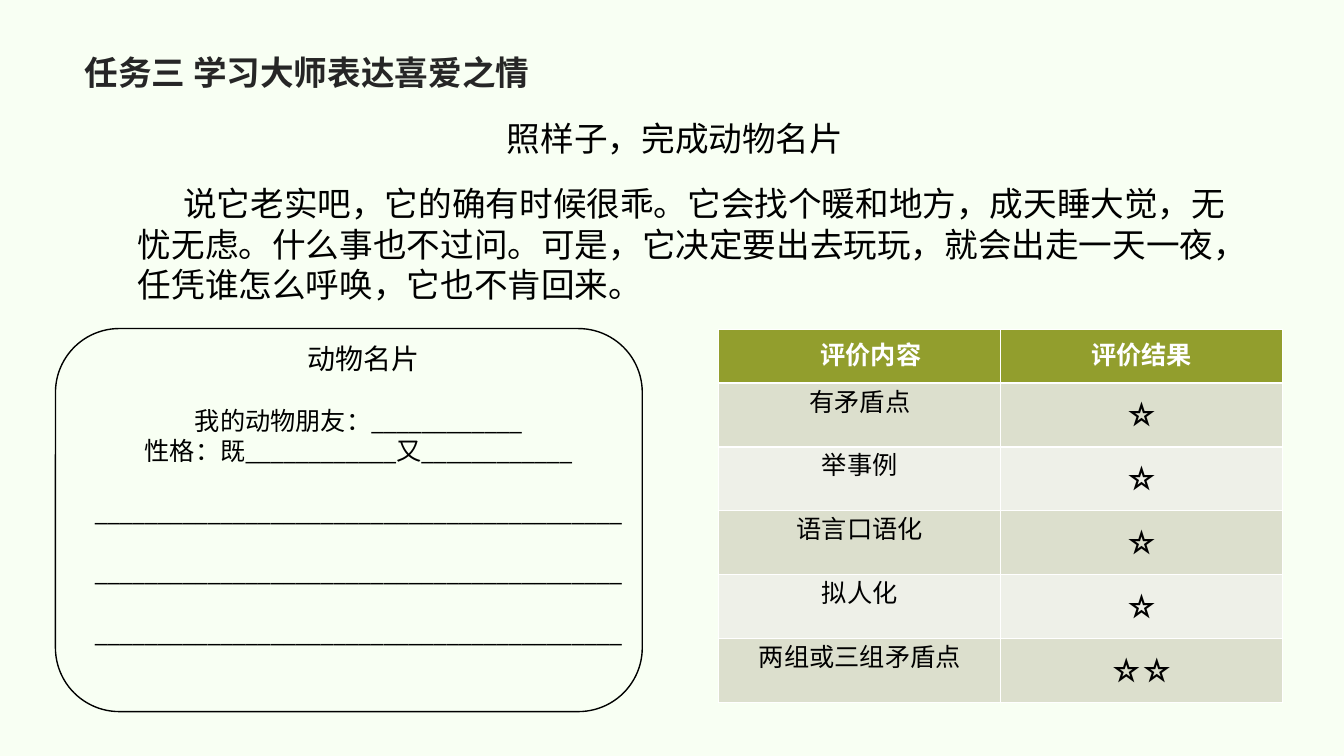
from pptx import Presentation
from pptx.dml.color import RGBColor
from pptx.enum.shapes import MSO_SHAPE
from pptx.enum.text import MSO_ANCHOR, PP_ALIGN
from pptx.oxml.ns import qn
from pptx.util import Inches, Pt

BACKGROUND = RGBColor(0xF8, 0xFF, 0xF3)
BLACK = RGBColor(0, 0, 0)
WHITE = RGBColor(0xFF, 0xFF, 0xFF)
TITLE_GREY = RGBColor(0x26, 0x26, 0x26)
OLIVE = RGBColor(0x92, 0x9E, 0x2D)
BANDS = (RGBColor(0xDC, 0xDF, 0xCD), RGBColor(0xEE, 0xF0, 0xE8))
CJK_FONT = "Noto Sans CJK SC"


def place(at):
    return [Inches(length) for length in at]


class Worksheet:
    """Holds the text style and the current slide."""

    style = {"name": CJK_FONT, "size": Pt(18), "bold": False}

    def __init__(self, deck):
        self.page = deck.slides.add_slide(deck.slide_layouts[5])
        fill = self.page.background.fill
        fill.solid()
        fill.fore_color.rgb = BACKGROUND

    def add_words(self, para, text, color=BLACK, align=PP_ALIGN.CENTER, **changes):
        values = {**self.style, **changes}
        span = para.add_run()
        span.text = text
        for name, value in values.items():
            setattr(span.font, name, value)
        span.font.color.rgb = color
        east_asian = span.font._element.makeelement(qn("a:ea"), {"typeface": CJK_FONT})
        span.font._element.append(east_asian)
        para.alignment = align
        para.line_spacing = Pt(values["size"].pt * 1.2)

    def title(self, at, text):
        box = self.page.shapes.title
        box.left, box.top, box.width, box.height = place(at)
        frame = box.text_frame
        margins = {"margin_left": 0.11, "margin_top": 0.04,
                   "margin_right": 0.08, "margin_bottom": 0.04}
        for name, value in margins.items():
            setattr(frame, name, Inches(value))
        frame.vertical_anchor = MSO_ANCHOR.MIDDLE
        self.add_words(frame.paragraphs[0], text, TITLE_GREY, PP_ALIGN.LEFT,
                       name="Arial", size=Pt(24), bold=True)

    def text(self, at, lines):
        """Each line is its text, the space before it and its format."""
        frame = self.page.shapes.add_textbox(*place(at)).text_frame
        frame.word_wrap = True
        for number, (text, space, changes) in enumerate(lines):
            para = frame.add_paragraph() if number else frame.paragraphs[0]
            self.add_words(para, text, **changes)
            if space:
                para.space_before = Pt(space)
        return frame

    def card(self, at):
        shape = self.page.shapes.add_shape(MSO_SHAPE.ROUNDED_RECTANGLE, *place(at))
        shape.shadow.inherit = False
        shape.fill.background()
        shape.line.color.rgb = BLACK
        shape.line.width = Pt(1)

    def table(self, at, header, rows, heights):
        frame = self.page.shapes.add_table(len(rows) + 1, len(header), *place(at))
        table = frame.table
        for number, values in enumerate([header, *rows]):
            table.rows[number].height = Inches(heights[min(number, 1)])
            for column, text in enumerate(values):
                cell = table.cell(number, column)
                cell.fill.solid()
                cell.fill.fore_color.rgb = BANDS[(number - 1) % 2] if number else OLIVE
                para = cell.text_frame.paragraphs[0]
                if number:
                    self.add_words(para, text, size=Pt(32 if column else 18))
                else:
                    cell.vertical_anchor = MSO_ANCHOR.MIDDLE
                    self.add_words(para, text, WHITE, bold=True)
        table.cell(0, 0).margin_left = Inches(0.32)


def main():
    deck = Presentation()
    deck.slide_width, deck.slide_height = Inches(13.33), Inches(7.5)
    sheet = Worksheet(deck)

    # Title, instruction and sample passage
    sheet.title((0.73, 0.48, 11.87, 0.48), "任务三 学习大师表达喜爱之情")
    large = {"size": Pt(24)}
    sheet.text((0.42, 1.12, 12.55, 0.5), [("照样子，完成动物名片", 0, large)])
    passage = sheet.text((1.27, 1.77, 11.13, 1.31), [(
        "说它老实吧，它的确有时候很乖。它会找个暖和地方，成天睡大觉，无忧无虑。"
        "什么事也不过问。可是，它决定要出去玩玩，就会出走一天一夜，"
        "任凭谁怎么呼唤，它也不肯回来。", 0, {**large, "align": PP_ALIGN.LEFT})])
    passage.paragraphs[0]._p.get_or_add_pPr().set("indent", str(Inches(0.45)))

    # Animal card with blanks to fill in
    sheet.card((0.55, 3.26, 5.82, 3.8))
    blank = "_" * 12
    calibri = {"name": "Calibri"}
    card_text = sheet.text((0.84, 3.34, 5.53, 3.92), [
        ("动物名片", 0, {**calibri, "size": Pt(20)}),
        (f"我的动物朋友：{blank}", 21.6, calibri),
        (f"性格：既{blank}又{blank}", 0, calibri),
        *[("_" * 42, 21.6, calibri)] * 3])
    card_text.paragraphs[1]._p.get_or_add_pPr().set("marR", str(Inches(0.1)))

    # Assessment table
    criteria = ["有矛盾点", "举事例", "语言口语化", "拟人化", "两组或三组矛盾点"]
    stars = ["⭐"] * 4 + ["⭐⭐"]
    sheet.table((7.13, 3.27, 5.59, 3.7), ("评价内容", "评价结果"),
                list(zip(criteria, stars)), heights=(0.53, 0.63))

    deck.save("out.pptx")


if __name__ == "__main__":
    main()
